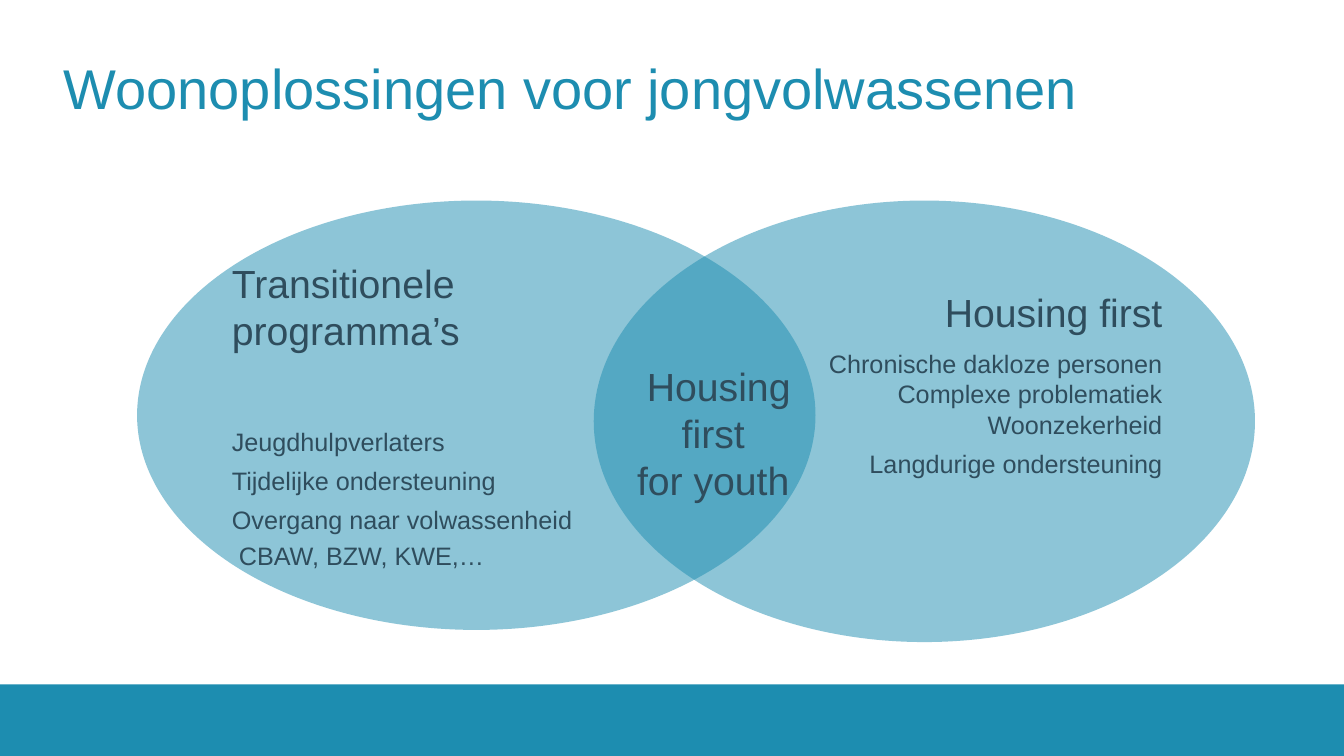
"""Build a slide with two overlapping ellipses on housing for young adults."""
from dataclasses import dataclass

from lxml import etree
from pptx import Presentation
from pptx.dml.color import RGBColor
from pptx.enum.shapes import MSO_SHAPE
from pptx.enum.text import MSO_ANCHOR, PP_ALIGN
from pptx.oxml.ns import qn
from pptx.util import Inches, Pt

RECT, OVAL = MSO_SHAPE.RECTANGLE, MSO_SHAPE.OVAL
LEFT, CENTER, RIGHT = PP_ALIGN.LEFT, PP_ALIGN.CENTER, PP_ALIGN.RIGHT
TOP, MIDDLE = MSO_ANCHOR.TOP, MSO_ANCHOR.MIDDLE
WIDTH, HEIGHT = Inches(13.333), Inches(7.5)


@dataclass(frozen=True)
class Theme:
    """Colours, font and type sizes in points."""
    accent: RGBColor = RGBColor(0x1D, 0x8D, 0xB0)
    ink: RGBColor = RGBColor(0x2F, 0x4D, 0x5D)
    font: str = "Arial"
    title: int = 40
    heading: int = 28
    body: int = 18
    heading_line: float = 33.5
    body_line: float = 21.8
    tight_line: float = 19.6


THEME = Theme()


def place(x, y, w, h):
    """Turn percentages of the slide into left, top, width and height."""
    return (int(WIDTH * x / 100), int(HEIGHT * y / 100),
            int(WIDTH * w / 100), int(HEIGHT * h / 100))


def add_run(p, text, size, color):
    """Add one formatted run to a paragraph."""
    r = p.add_run()
    r.text = text
    r.font.name, r.font.size = THEME.font, Pt(size)
    r.font.color.rgb = color


def set_frame(tf, anchor, inset_x=0, inset_y=0):
    """Set wrapping, anchor and insets of a text frame."""
    tf.word_wrap, tf.vertical_anchor = True, anchor
    tf.margin_left = tf.margin_right = Inches(inset_x)
    tf.margin_top = tf.margin_bottom = Inches(inset_y)


def add_title(s, text, area):
    """Move and fill the title placeholder."""
    sp = s.shapes.title
    sp.left, sp.top, sp.width, sp.height = place(*area)
    set_frame(sp.text_frame, MIDDLE)
    p = sp.text_frame.paragraphs[0]
    p.alignment = LEFT
    add_run(p, text, THEME.title, THEME.accent)


def add_area(s, kind, area, alpha=100):
    """Add a borderless accent shape with the given opacity in percent."""
    sp = s.shapes.add_shape(kind, *place(*area))
    sp.shadow.inherit = False
    sp.fill.solid()
    sp.fill.fore_color.rgb = THEME.accent
    sp.line.fill.background()
    if alpha < 100:
        color = sp.fill._xPr.find(qn("a:solidFill"))[0]
        etree.SubElement(color, qn("a:alpha")).set("val", str(alpha * 1000))


def add_text(s, area, lines, align, anchor=TOP, inset_x=0, inset_y=0):
    """Add a text box from (text, size, line height, space after) rows."""
    tf = s.shapes.add_textbox(*place(*area)).text_frame
    set_frame(tf, anchor, inset_x, inset_y)
    for i, (text, size, line, after) in enumerate(lines):
        p = tf.add_paragraph() if i else tf.paragraphs[0]
        p.alignment = align
        p.line_spacing, p.space_after = Pt(line), Pt(after)
        add_run(p, text, size, THEME.ink)


def heading(text, after=0):
    """Describe a heading line."""
    return text, THEME.heading, THEME.heading_line, after


def body(text, after=0, line=THEME.body_line):
    """Describe a body line."""
    return text, THEME.body, line, after


def main():
    """Build and save the slide."""
    prs = Presentation()
    prs.slide_width, prs.slide_height = WIDTH, HEIGHT
    s = prs.slides.add_slide(prs.slide_layouts[5])
    add_area(s, RECT, (0, 90.53, 100, 9.47))
    add_title(s, "Woonoplossingen voor jongvolwassenen",
              (4.73, 3.07, 90.53, 16.8))

    add_area(s, OVAL, (10.2, 26.53, 50.48, 56.8), alpha=50)
    add_text(s, (17.25, 33.2, 29.1, 43.33), [
        heading("Transitionele programma’s", 52),
        body("Jeugdhulpverlaters", 6),
        body("Tijdelijke ondersteuning", 6),
        body("Overgang naar volwassenheid", 6),
        body(" CBAW, BZW, KWE,…", line=THEME.tight_line),
    ], LEFT, MIDDLE)

    add_area(s, OVAL, (44.18, 26.53, 49.2, 58.4), alpha=50)
    add_text(s, (58.13, 38.13, 28.35, 40), [
        heading("Housing first", 9),
        body("Chronische dakloze personen"),
        body("Complexe problematiek"),
        body("Woonzekerheid", 6),
        body("Langdurige ondersteuning"),
    ], RIGHT)

    add_text(s, (45, 47.33, 16.95, 20), [
        heading("Housing first "),
        heading("for youth "),
    ], CENTER, inset_x=0.1, inset_y=0.05)
    prs.save("out.pptx")


if __name__ == "__main__":
    main()
